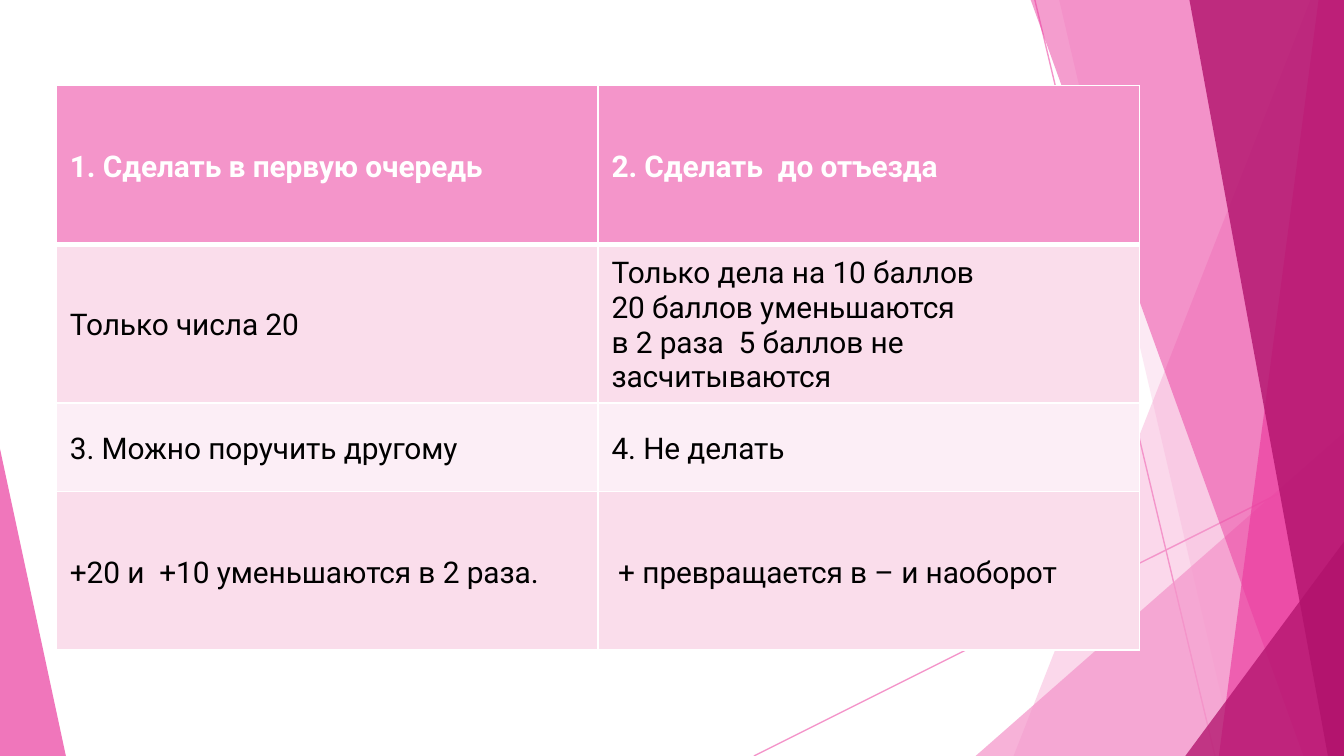
from dataclasses import dataclass

from lxml.etree import SubElement
from pptx import Presentation
from pptx.dml.color import RGBColor
from pptx.enum.shapes import MSO_CONNECTOR
from pptx.enum.text import MSO_ANCHOR
from pptx.oxml.ns import qn
from pptx.util import Pt


@dataclass(frozen=True)
class Theme:
    font: str = "Roboto"
    text_size: float = 16
    letter_spacing: float = -0.03
    wide_gap_spacing: float = 3.9
    white: str = "FFFFFF"
    black: str = "000000"
    light_pink: str = "F495CA"
    pink: str = "EB3C9F"
    dark_pink: str = "B1126C"
    band: str = "FADDEB"
    pale_band: str = "FCEEF6"


@dataclass(frozen=True)
class Box:
    left: float
    top: float
    width: float
    height: float


THEME = Theme()
SLIDE_BOX = Box(0, 0, 720, 405)
TABLE_BOX = Box(30.24, 45.9, 580.32, 302.4)

# Fan panels: top left x, top y, bottom left x, colour, opacity in percent
FAN_PANELS = [
    (702, 0, 543, THEME.light_pink, 36),
    (567.4, 0, 661.7, THEME.light_pink, 20),
    (720, 231.7, 522.7, THEME.light_pink, 72),
    (552.2, 0, 698.4, THEME.pink, 50),
    (706.4, 0, 653, THEME.pink, 66),
    (637.2, 0, 711.4, THEME.dark_pink, 80),
    (720, 290.2, 635, THEME.dark_pink, 76),
]
FAN_LINES = [(403.9, 405, 720, 247), (554.4, 0, 650.9, 405)]
LEFT_WEDGE = [(0, 240.5), (0, 405), (35.3, 405)]

# Table rows: height, fill, text colour, bold, cells as lists of paragraphs.
# In the text, "|" marks a widened word gap and "\n" a line break.
ROWS = [
    (84.96, THEME.light_pink, THEME.white, True,
     [["1. Сделать в первую очередь"], ["2. Сделать|до отъезда"]]),
    (84.96, THEME.band, THEME.black, False,
     [["Только числа 20"],
      ["Только дела на 10 баллов",
       "20 баллов уменьшаются\nв 2 раза|5 баллов не засчитываются"]]),
    (47.52, THEME.pale_band, THEME.black, False,
     [["3. Можно поручить другому"], ["4. Не делать"]]),
    (84.96, THEME.band, THEME.black, False,
     [["+20 и|+10 уменьшаются в 2 раза."], ["+ превращается в – и наоборот"]]),
]
CELL_INDENT = 7.2
SPECIAL_INDENTS = {(3, 1): 10.8}
RIGHT_INSETS = {(1, 1): 60}  # keeps the scoring rule in a narrow column


def add_polygon(slide, box, points, color, opacity):
    corners = [(Pt(box.left + x), Pt(box.top + y)) for x, y in points]
    builder = slide.shapes.build_freeform(*corners[0])
    builder.add_line_segments(corners[1:], close=True)
    shape = builder.convert_to_shape()
    shape.shadow.inherit = False
    shape.line.fill.background()
    shape.fill.solid()
    shape.fill.fore_color.rgb = RGBColor.from_string(color)
    color_element = shape._element.spPr.find(".//" + qn("a:srgbClr"))
    SubElement(color_element, qn("a:alpha"), val=str(opacity * 1000))


def add_decoration(slide, box):
    # Thin crossing lines
    for start_x, start_y, end_x, end_y in FAN_LINES:
        connector = slide.shapes.add_connector(
            MSO_CONNECTOR.STRAIGHT,
            Pt(box.left + start_x), Pt(box.top + start_y),
            Pt(box.left + end_x), Pt(box.top + end_y))
        connector.line.color.rgb = RGBColor.from_string(THEME.light_pink)
        connector.line.width = Pt(0.75)
        SubElement(connector._element.spPr, qn("a:effectLst"))

    # Panels that all reach the bottom right corner
    for top_x, top_y, bottom_x, color, opacity in FAN_PANELS:
        corners = [(top_x, top_y), (bottom_x, box.height),
                   (box.width, box.height), (box.width, top_y)]
        add_polygon(slide, box, list(dict.fromkeys(corners)), color, opacity)

    # Wedge at the lower left
    add_polygon(slide, box, LEFT_WEDGE, THEME.pink, 70)


def set_borders(cell, widths):
    properties = cell._tc.get_or_add_tcPr()
    for position, (side, width) in enumerate(widths.items()):
        line = SubElement(properties, qn(f"a:ln{side}"), w=str(Pt(width)))
        fill = SubElement(line, qn("a:solidFill"))
        SubElement(fill, qn("a:srgbClr"), val=THEME.white)
        properties.insert(position, line)


def add_text_run(paragraph, text, color, bold, spacing):
    run = paragraph.add_run()
    run.text = text
    run.font.name = THEME.font
    run.font.size = Pt(THEME.text_size)
    run.font.bold = bold
    run.font.color.rgb = RGBColor.from_string(color)
    run._r.get_or_add_rPr().set("spc", str(round(spacing * 100)))


def fill_cell(cell, paragraphs, color, bold, indent):
    frame = cell.text_frame
    for number, text in enumerate(paragraphs):
        paragraph = frame.paragraphs[0] if number == 0 else frame.add_paragraph()
        paragraph._p.get_or_add_pPr().set("marL", str(Pt(indent)))
        for line_number, line in enumerate(text.split("\n")):
            if line_number:
                paragraph.add_line_break()
            for part_number, part in enumerate(line.split("|")):
                if part_number:
                    add_text_run(paragraph, " ", color, bold, THEME.wide_gap_spacing)
                add_text_run(paragraph, part, color, bold, THEME.letter_spacing)


def add_priority_table(slide, box):
    columns = len(ROWS[0][-1])
    table = slide.shapes.add_table(
        len(ROWS), columns, Pt(box.left), Pt(box.top),
        Pt(box.width), Pt(box.height)).table
    for column in table.columns:
        column.width = Pt(box.width / columns)

    for row, (height, fill, color, bold, cells) in enumerate(ROWS):
        table.rows[row].height = Pt(height)
        borders = {"L": 1, "R": 1, "T": 3 if row == 1 else 1,
                   "B": 3 if row == 0 else 1}
        for column, paragraphs in enumerate(cells):
            cell = table.cell(row, column)
            cell.fill.solid()
            cell.fill.fore_color.rgb = RGBColor.from_string(fill)
            cell.vertical_anchor = MSO_ANCHOR.MIDDLE
            cell.margin_left = cell.margin_bottom = Pt(0)
            cell.margin_top = Pt(2.3)
            cell.margin_right = Pt(RIGHT_INSETS.get((row, column), 0))
            set_borders(cell, borders)
            indent = SPECIAL_INDENTS.get((row, column), CELL_INDENT)
            fill_cell(cell, paragraphs, color, bold, indent)


def main():
    presentation = Presentation()
    presentation.slide_width = Pt(SLIDE_BOX.width)
    presentation.slide_height = Pt(SLIDE_BOX.height)
    slide = presentation.slides.add_slide(presentation.slide_layouts[6])
    add_decoration(slide, SLIDE_BOX)
    add_priority_table(slide, TABLE_BOX)
    presentation.save("out.pptx")


if __name__ == "__main__":
    main()
